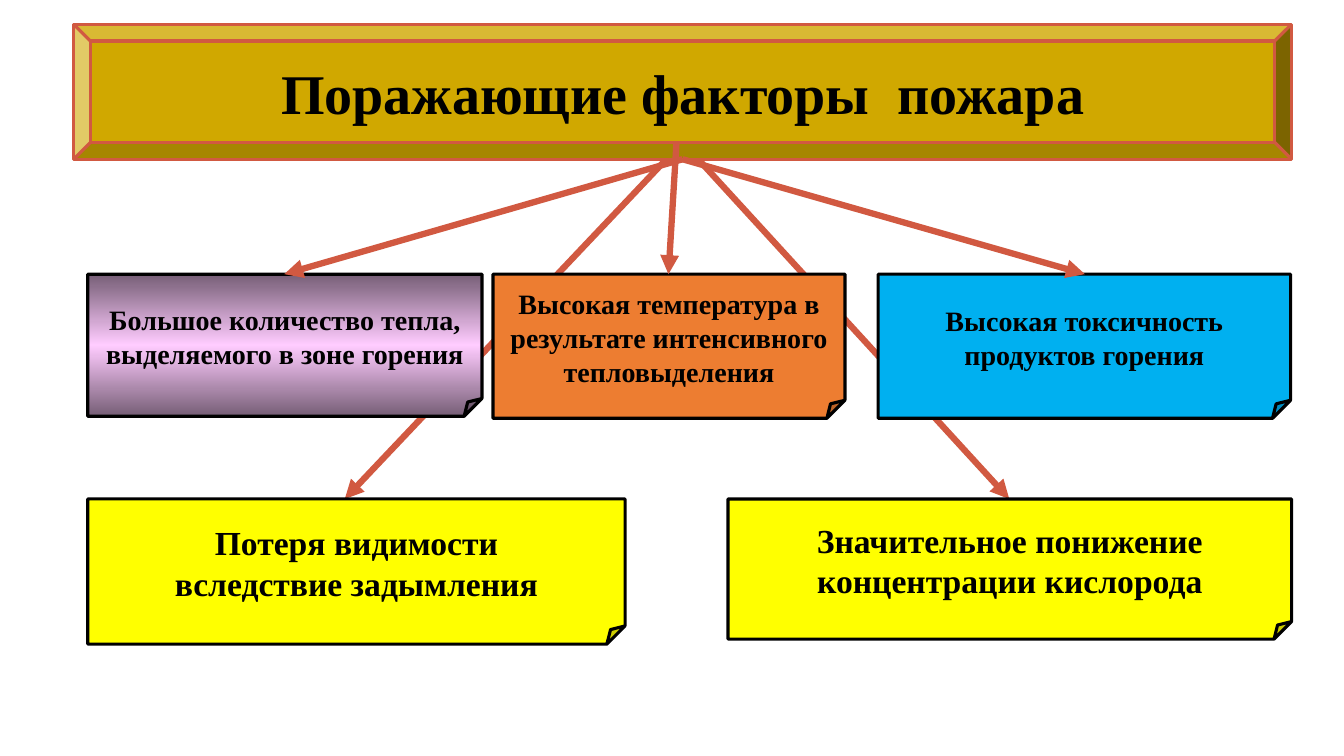
"""Build a slide that shows the harmful factors of a fire."""
import copy

import pptx
import pptx.dml.color
import pptx.enum.shapes
import pptx.enum.text
import pptx.oxml
import pptx.oxml.ns
import pptx.util

Inches = pptx.util.Inches
KIND = pptx.enum.shapes.MSO_SHAPE
SPACE = pptx.oxml.ns.nsdecls("a")
HUES = {
    "gold": "D0A800", "red": "D15941", "black": "000000", "yellow": "FFFF00",
    "plum": "765E76", "pink": "FFCCFF", "blue": "00B0F0", "orange": "ED7D31",
}


def hue(name):
    return pptx.dml.color.RGBColor.from_string(HUES[name])


def write(frame, text, size=20, font="Times New Roman", color="black", bold=True):
    frame.word_wrap = True
    frame.vertical_anchor = pptx.enum.text.MSO_ANCHOR.MIDDLE
    frame.text = text
    for para in frame.paragraphs:
        para.alignment = pptx.enum.text.PP_ALIGN.CENTER
        for run in para.runs:
            run.font.size = pptx.util.Pt(size)
            run.font.name = font
            run.font.bold = bold
            run.font.color.rgb = hue(color)


class Board:
    edge = 2.25
    beam = 4.5
    fold = 12500

    def __init__(self, slide):
        self.slide = slide

    def panel(self, kind, spot, fill, line, text, size):
        shape = self.slide.shapes.add_shape(kind, *map(Inches, spot))
        shape.shadow.inherit = False
        self.adjust(shape)
        if isinstance(fill, tuple):
            self.blend(shape, *fill)
        else:
            shape.fill.solid()
            shape.fill.fore_color.rgb = hue(fill)
        shape.line.color.rgb = hue(line)
        shape.line.width = pptx.util.Pt(self.edge)
        write(shape.text_frame, text, size=size)

    def adjust(self, shape):
        geom = shape._element.spPr.find(pptx.oxml.ns.qn("a:prstGeom"))
        for child in list(geom):
            geom.remove(child)
        geom.append(pptx.oxml.parse_xml(
            f'<a:avLst {SPACE}><a:gd name="adj" fmla="val {self.fold}"/></a:avLst>'))

    def blend(self, shape, rim, core):
        shape.fill.gradient()
        shape.fill.gradient_angle = 90
        stops = shape._element.spPr.find(".//" + pptx.oxml.ns.qn("a:gsLst"))
        stops.append(copy.deepcopy(stops[-1]))
        for stop, name, place in zip(shape.fill.gradient_stops,
                                     (rim, core, rim), (0, 0.5, 1)):
            stop.color.rgb = hue(name)
            stop.position = place

    def note(self, spot, fill, text, size):
        self.panel(KIND.FOLDED_CORNER, spot, fill, "black", text, size)

    def arrow(self, start, end):
        line = self.slide.shapes.add_connector(
            pptx.enum.shapes.MSO_CONNECTOR.STRAIGHT, *map(Inches, start + end))
        line.line.color.rgb = hue("red")
        line.line.width = pptx.util.Pt(self.beam)
        line.line._get_or_add_ln().append(
            pptx.oxml.parse_xml(f'<a:tailEnd {SPACE} type="triangle"/>'))
        line._element.spPr.append(pptx.oxml.parse_xml(f"<a:effectLst {SPACE}/>"))


def main():
    deck = pptx.Presentation()
    deck.slide_width = Inches(13.33)
    deck.slide_height = Inches(7.5)
    board = Board(deck.slides.add_slide(deck.slide_layouts[6]))

    left, top, low = 0.87, 2.72, 4.95
    hub = 6.77
    for end in (3.42, 10.01):
        board.arrow((hub, 1.41), (end, low))

    board.panel(KIND.BEVEL, (0.73, 0.24, 12.08, 1.34), "gold", "red",
                "Поражающие факторы  пожара", 40)

    notes = [
        ((left, low, 5.33, 1.44), "yellow",
         "Потеря видимости\nвследствие задымления", 24),
        ((7.22, low, 5.59, 1.39), "yellow",
         "Значительное понижение\nконцентрации кислорода", 24),
        ((left, top, 3.91, 1.41), ("plum", "pink"),
         "Большое количество тепла, выделяемого в зоне горения", 20),
        ((8.71, top, 4.09, 1.43), "blue",
         "Высокая токсичность\nпродуктов горения", 20),
        ((4.89, top, 3.49, 1.43), "orange",
         "Высокая температура в результате интенсивного\nтепловыделения", 20),
    ]
    for note in notes:
        board.note(*note)

    for start, end in (((hub, 1.58), 10.76), ((hub, 1.58), 2.82),
                       ((6.71, 1.41), 6.63)):
        board.arrow(start, (end, top))

    deck.save("out.pptx")


if __name__ == "__main__":
    main()
